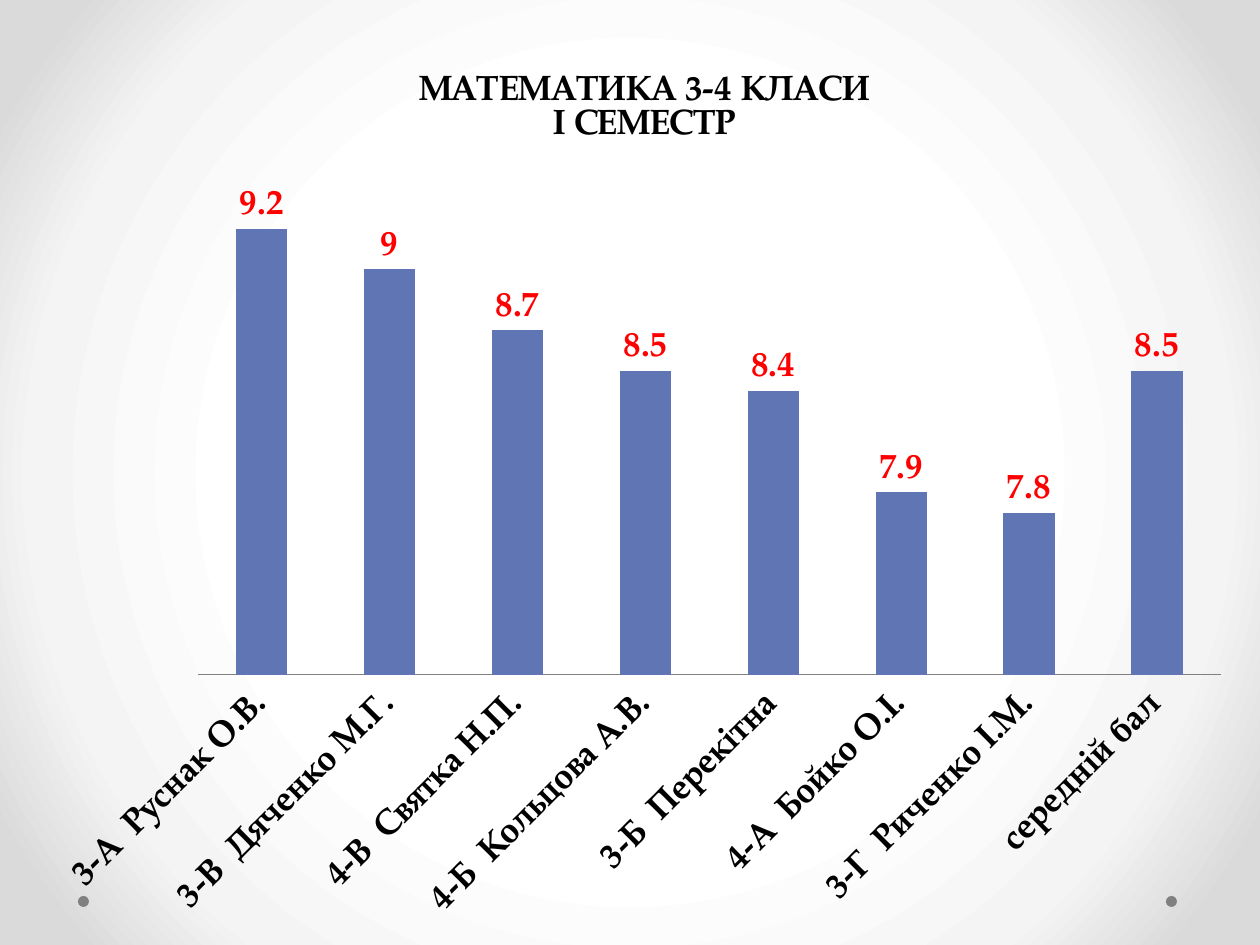
from dataclasses import dataclass

from pptx import Presentation
from pptx.chart.data import CategoryChartData
from pptx.dml.color import RGBColor
from pptx.enum.chart import XL_CHART_TYPE, XL_LABEL_POSITION, XL_TICK_LABEL_POSITION, XL_TICK_MARK
from pptx.enum.shapes import MSO_SHAPE
from pptx.oxml import parse_xml
from pptx.oxml.ns import nsdecls, qn
from pptx.util import Emu, Pt

COLUMNS = XL_CHART_TYPE.COLUMN_CLUSTERED
ABOVE_BAR = XL_LABEL_POSITION.OUTSIDE_END
LABELS_LOW = XL_TICK_LABEL_POSITION.LOW
NO_TICKS = XL_TICK_MARK.NONE
OVAL = MSO_SHAPE.OVAL

EMU_PER_PX = 914400 / 126
SLIDE_WIDTH, SLIDE_HEIGHT = 1260, 945


@dataclass(frozen=True)
class Theme:
    font: str = "TeX Gyre Pagella"
    text: str = "000000"
    bar: str = "6076B4"
    value: str = "FF0000"
    neutral: str = "808080"
    backdrop: tuple = ((50, "FFFFFF"), (76, "F4F4F4"), (92, "DADADA"))
    base_size: int = 10
    chart_size: int = 20


THEME = Theme()
TITLE_LINES = ("МАТЕМАТИКА 3-4 КЛАСИ", "І СЕМЕСТР")
AVERAGE_MARKS = {
    "3-А  Руснак О.В.": 9.2,
    "3-В  Дяченко М.Г.": 9,
    "4-В  Святка Н.П.": 8.7,
    "4-Б  Кольцова А.В.": 8.5,
    "3-Б  Перекітна": 8.4,
    "4-А  Бойко О.І.": 7.9,
    "3-Г  Риченко І.М.": 7.8,
    "середній бал": 8.5,
}


def px(length):
    return Emu(round(length * EMU_PER_PX))


def style_font(font, size, color, bold=True):
    font.name = THEME.font
    font.size = Pt(size)
    font.bold = bold
    font.color.rgb = RGBColor.from_string(color)


def paint_background(slide):
    stops = "".join(
        f'<a:gs pos="{position * 1000}"><a:srgbClr val="{color}"/></a:gs>'
        for position, color in THEME.backdrop
    )
    background = parse_xml(
        f'<p:bg {nsdecls("p", "a")}><p:bgPr><a:gradFill rotWithShape="1">'
        f'<a:gsLst>{stops}</a:gsLst><a:path path="circle">'
        '<a:fillToRect l="50000" t="50000" r="50000" b="50000"/></a:path>'
        '</a:gradFill><a:effectLst/></p:bgPr></p:bg>'
    )
    slide.element.find(qn("p:cSld")).insert(0, background)


def add_corner_dots(slide, left, top, width, diameter):
    """Place one dot at each end of a row of the given width."""
    for dot_left in (left, left + width - diameter):
        dot = slide.shapes.add_shape(OVAL, px(dot_left), px(top), px(diameter), px(diameter))
        dot.shadow.inherit = False
        dot.fill.solid()
        dot.fill.fore_color.rgb = RGBColor.from_string(THEME.neutral)
        dot.line.fill.background()


def set_title(chart):
    frame = chart.chart_title.text_frame
    for index, line in enumerate(TITLE_LINES):
        paragraph = frame.add_paragraph() if index else frame.paragraphs[0]
        paragraph.text = line
        style_font(paragraph.font, THEME.chart_size, THEME.text)
    chart.chart_title.include_in_layout = False


def style_axes(chart):
    marks = chart.value_axis
    marks.minimum_scale, marks.maximum_scale = 7, 9.5
    marks.has_major_gridlines = False
    marks.visible = False

    classes = chart.category_axis
    classes.major_tick_mark = classes.minor_tick_mark = NO_TICKS
    classes.tick_label_position = LABELS_LOW
    classes.format.line.color.rgb = RGBColor.from_string(THEME.neutral)
    style_font(classes.tick_labels.font, THEME.chart_size, THEME.text)
    label_body = classes._element.find(qn("c:txPr")).find(qn("a:bodyPr"))
    label_body.set("rot", str(-45 * 60000))
    label_body.set("vert", "horz")


def style_bars(chart):
    plot = chart.plots[0]
    plot.gap_width = 150
    plot.vary_by_categories = False
    bars = plot.series[0]
    bars.format.fill.solid()
    bars.format.fill.fore_color.rgb = RGBColor.from_string(THEME.bar)
    labels = bars.data_labels
    labels.show_value = True
    labels.position = ABOVE_BAR
    style_font(labels.font, THEME.chart_size, THEME.value)


def fix_plot_area(chart, x, y, w, h):
    """Fix the inner plot area, in fractions of the chart's size."""
    plot_area = chart._chartSpace.chart.plotArea
    for old_layout in plot_area.findall(qn("c:layout")):
        plot_area.remove(old_layout)
    fractions = "".join(
        f'<c:{side} val="{value:.4f}"/>'
        for side, value in (("x", x), ("y", y), ("w", w), ("h", h))
    )
    plot_area.insert(0, parse_xml(
        f'<c:layout {nsdecls("c")}><c:manualLayout><c:layoutTarget val="inner"/>'
        f'<c:xMode val="edge"/><c:yMode val="edge"/>{fractions}'
        '</c:manualLayout></c:layout>'
    ))


def add_marks_chart(slide, left, top, width, height):
    marks = CategoryChartData()
    marks.categories = list(AVERAGE_MARKS)
    marks.add_series("Series 1", list(AVERAGE_MARKS.values()))
    chart = slide.shapes.add_chart(
        COLUMNS, px(left), px(top), px(width), px(height), marks
    ).chart
    chart.has_legend = False
    style_font(chart.font, THEME.base_size, THEME.text, bold=False)
    set_title(chart)
    style_axes(chart)
    style_bars(chart)
    fix_plot_area(chart, 154 / width, 123 / height, 1023 / width, 507 / height)


def main():
    presentation = Presentation()
    presentation.slide_width = px(SLIDE_WIDTH)
    presentation.slide_height = px(SLIDE_HEIGHT)
    slide = presentation.slides.add_slide(presentation.slide_layouts[6])
    paint_background(slide)
    add_corner_dots(slide, left=78, top=896, width=1099, diameter=11)
    add_marks_chart(slide, left=44, top=45, width=1201, height=883)
    presentation.save("out.pptx")


if __name__ == "__main__":
    main()
